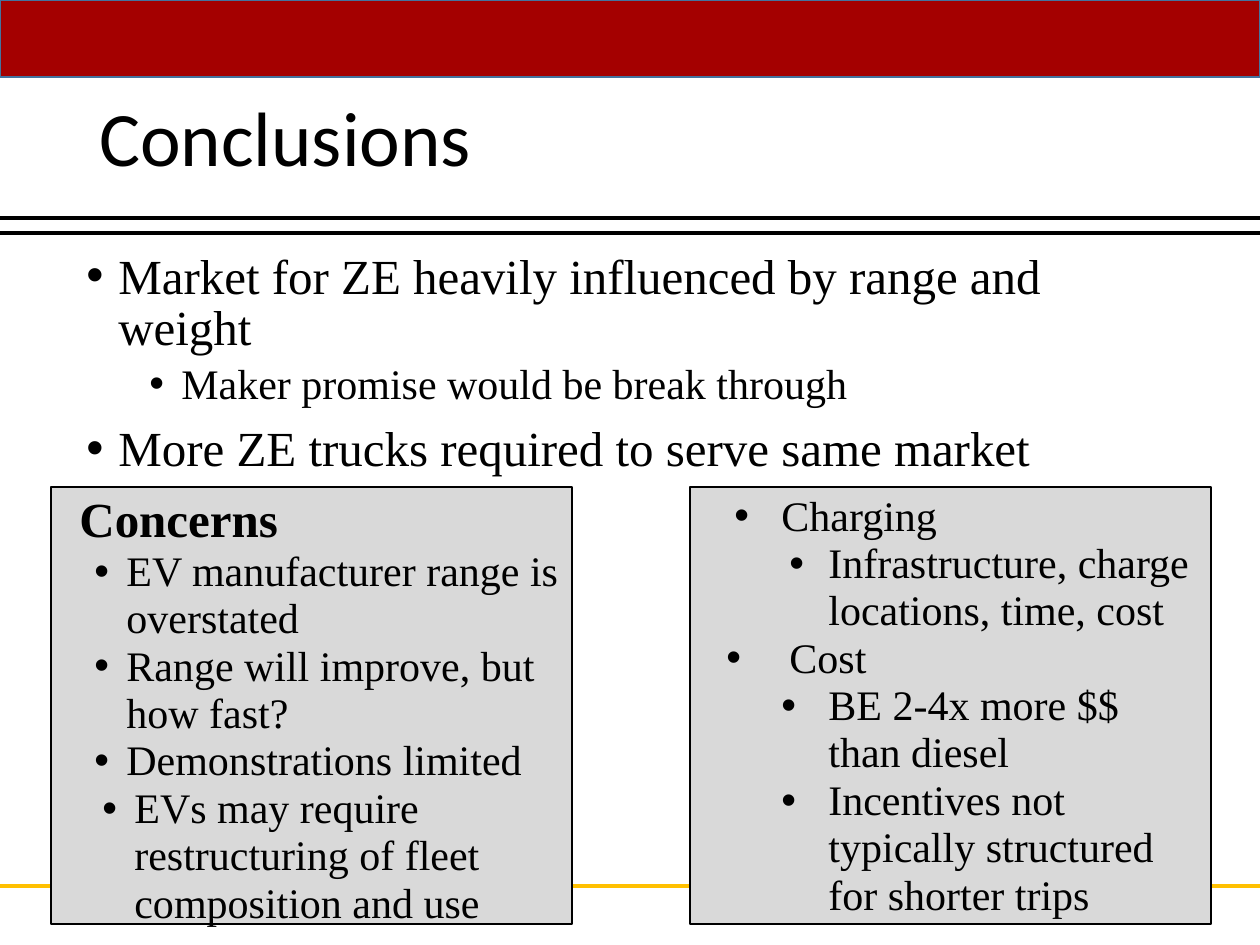
from lxml import etree
from pptx import Presentation
from pptx.dml.color import RGBColor
from pptx.enum.shapes import MSO_CONNECTOR, MSO_SHAPE
from pptx.enum.text import MSO_ANCHOR, PP_ALIGN
from pptx.oxml.ns import qn
from pptx.util import Emu, Pt

RECTANGLE = MSO_SHAPE.RECTANGLE
STRAIGHT = MSO_CONNECTOR.STRAIGHT
TOP, MIDDLE = MSO_ANCHOR.TOP, MSO_ANCHOR.MIDDLE
LEFT = PP_ALIGN.LEFT

BLACK = RGBColor(0x00, 0x00, 0x00)
RED = RGBColor(0xA4, 0x00, 0x00)
BLUE = RGBColor(0x43, 0x73, 0x9E)
GOLD = RGBColor(0xFF, 0xC0, 0x00)
GRAY = RGBColor(0xD9, 0xD9, 0xD9)

PX = 914400 / 126
WIDTH, HEIGHT = 1260, 945


def px(*lengths):
    return [Emu(round(length * PX)) for length in lengths]


def write_list(text_frame, rows, line_spacing):
    """Each row: text, size, bold, level, left margin, hanging indent, space before."""
    text_frame.word_wrap = True
    text_frame.vertical_anchor = TOP
    for index, (text, size, bold, level, margin, hanging, space) in enumerate(rows):
        paragraph = text_frame.paragraphs[0] if index == 0 else text_frame.add_paragraph()
        paragraph.text = text
        paragraph.level = level
        paragraph.alignment = LEFT
        paragraph.line_spacing = line_spacing
        paragraph.space_before = Pt(space)
        properties = paragraph._p.get_or_add_pPr()
        margin_left, indent = px(margin, -hanging)
        properties.set("marL", str(margin_left))
        properties.set("indent", str(indent))
        if hanging:
            etree.SubElement(properties, qn("a:buFont")).set("typeface", "Arial")
            etree.SubElement(properties, qn("a:buChar")).set("char", "•")
        font = paragraph.runs[0].font
        font.name, font.size, font.bold = "Times New Roman", Pt(size), bold
        font.color.rgb = BLACK


presentation = Presentation()
presentation.slide_width, presentation.slide_height = px(WIDTH, HEIGHT)
slide = presentation.slides.add_slide(presentation.slide_layouts[6])
shapes = slide.shapes

# Red banner
banner = shapes.add_shape(RECTANGLE, *px(0, 0, WIDTH, 77))
banner.shadow.inherit = False
banner.fill.solid()
banner.fill.fore_color.rgb = RED
banner.line.color.rgb = BLUE
banner.line.width = Pt(1)

# Footer rule and double rule under the title
for y, color in ((886, GOLD), (233, BLACK), (218, BLACK)):
    rule = shapes.add_connector(STRAIGHT, *px(0, y, WIDTH, y))
    rule.line.color.rgb = color
    rule.line.width = Pt(2.25)
    etree.SubElement(rule._element.spPr, qn("a:effectLst"))

# Title
title = shapes.add_textbox(*px(87, 50, 1086, 183))
title.text_frame.word_wrap = True
title.text_frame.vertical_anchor = MIDDLE
title.text_frame.text = "Conclusions"
paragraph = title.text_frame.paragraphs[0]
paragraph.line_spacing = 0.9
font = paragraph.runs[0].font
font.name, font.size, font.color.rgb = "Calibri", Pt(44), BLACK

# Main points
main_points = shapes.add_textbox(*px(74, 247, 1086, 241))
write_list(main_points.text_frame, [
    ("Market for ZE heavily influenced by range and weight", 28, False, 0, 32, 32, 0),
    ("Maker promise would be break through", 24, False, 1, 95, 32, 5),
    ("More ZE trucks required to serve same market", 28, False, 0, 32, 32, 10),
], 0.87)

# Gray panels
concerns = [
    ("Concerns", 28, True, 0, 16, 0, 0),
    ("EV manufacturer range is overstated", 24, False, 0, 63, 32, 0),
    ("Range will improve, but how fast?", 24, False, 0, 63, 32, 0),
    ("Demonstrations limited", 24, False, 0, 63, 32, 0),
    ("EVs may require restructuring of fleet composition and use", 24, False, 0, 71, 32, 0),
]
costs = [
    ("Charging", 24, False, 0, 79, 47, 0),
    ("Infrastructure, charge locations, time, cost", 24, False, 1, 126, 39, 0),
    ("Cost", 24, False, 0, 87, 63, 0),
    ("BE 2-4x more $$ than diesel", 24, False, 1, 126, 47, 0),
    ("Incentives not typically structured for shorter trips", 24, False, 1, 126, 47, 0),
]
for left, rows in ((51, concerns), (690, costs)):
    panel = shapes.add_shape(RECTANGLE, *px(left, 487, 521, 437))
    panel.shadow.inherit = False
    panel.fill.solid()
    panel.fill.fore_color.rgb = GRAY
    panel.line.color.rgb = BLACK
    panel.line.width = Pt(0.75)
    write_list(panel.text_frame, rows, 0.94)

presentation.save("out.pptx")
